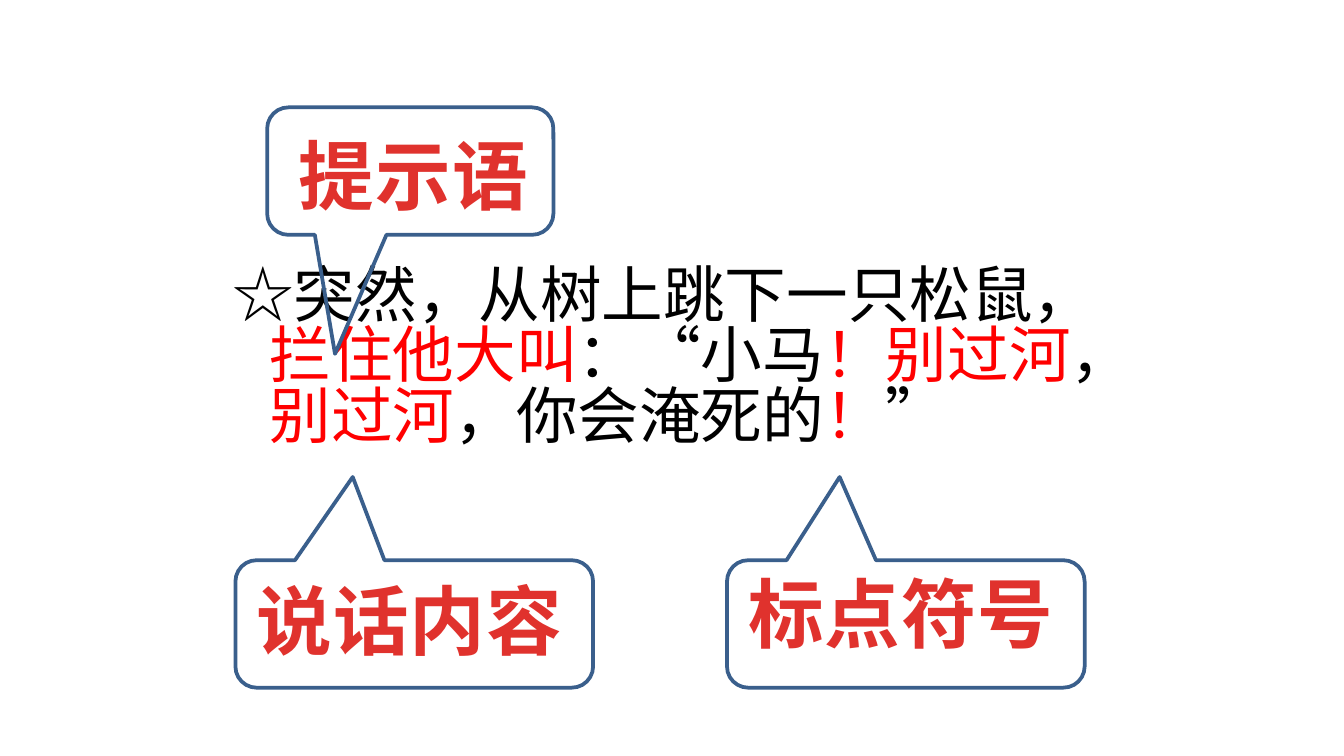
from lxml.etree import SubElement
from pptx import Presentation
from pptx.dml.color import RGBColor
from pptx.enum.lang import MSO_LANGUAGE_ID
from pptx.enum.shapes import MSO_SHAPE
from pptx.enum.text import PP_ALIGN
from pptx.oxml.ns import qn
from pptx.util import Cm, Pt

FACE = "Noto Sans CJK SC"
BLACK, RED = "000000", "FF0000"
LABEL, EDGE = "E0322D", "3A5F8C"

# Sentence pieces with their colours
SENTENCE = [
    ("☆突然，从树上跳下一只松鼠，", BLACK),
    ("拦住他大叫", RED),
    ("：“小马", BLACK),
    ("！别过河", RED),
    ("，", BLACK),
    ("别过河", RED),
    ("，你会淹死的", BLACK),
    ("！", RED),
    ("”", BLACK),
]

# Callouts: text, box, tail tip, label offset (cm)
CALLOUTS = [
    ("提示语", (5.05, 2.03, 5.41, 2.41), (-0.263, 1.434), (0.15, 0.3)),
    ("说话内容", (4.45, 10.59, 6.76, 2.41), (-0.172, -1.153), (0, 0.15)),
    ("标点符号", (13.74, 10.59, 6.76, 2.41), (-0.185, -1.153), (0, 0.03)),
]


def color(code):
    return RGBColor.from_string(code)


def set_font(font, size):
    """Set the face for Latin and Chinese text, and the size."""
    font.name = FACE
    font.size = Pt(size)
    font.language_id = MSO_LANGUAGE_ID.SIMPLIFIED_CHINESE
    SubElement(font._element, qn("a:ea"), typeface=FACE)


def add_text(slide, box, inset):
    """Add a wrapping text box; inset is (side, top)."""
    frame = slide.shapes.add_textbox(*map(Cm, box)).text_frame
    frame.word_wrap = True
    side, top = map(Cm, inset)
    frame.margin_left = frame.margin_right = side
    frame.margin_top = frame.margin_bottom = top
    return frame.paragraphs[0]


def add_sentence(slide, box):
    para = add_text(slide, box, (0.25, 0.25))
    para.line_spacing = 0.82
    # Hanging indent
    props = para._p.get_or_add_pPr()
    props.set("marL", str(Cm(0.71)))
    props.set("indent", str(Cm(-0.71)))
    set_font(para.font, 33)
    for text, code in SENTENCE:
        run = para.add_run()
        run.text = text
        run.font.color.rgb = color(code)


def add_callout(slide, text, box, tip, shift):
    left, top, width, height = box
    # Bubble
    bubble = slide.shapes.add_shape(
        MSO_SHAPE.ROUNDED_RECTANGULAR_CALLOUT, *map(Cm, box))
    bubble.shadow.inherit = False
    bubble.fill.background()
    bubble.line.color.rgb = color(EDGE)
    bubble.line.width = Pt(2)
    for index, value in enumerate((*tip, 0.167)):
        bubble.adjustments[index] = value
    # Label
    area = (left + shift[0], top + shift[1], width - 0.18, height - 0.48)
    para = add_text(slide, area, (0.2, 0.1))
    para.alignment = PP_ALIGN.CENTER
    para.add_run().text = text
    font = para.font
    font.bold = True
    font.color.rgb = color(LABEL)
    set_font(font, 40.5)
    font._element.set("spc", "50")


def main():
    deck = Presentation()
    deck.slide_width, deck.slide_height = Cm(25.4), Cm(14.29)
    slide = deck.slides.add_slide(deck.slide_layouts[6])
    add_sentence(slide, (4.14, 4.83, 17.12, 5.92))
    for callout in CALLOUTS:
        add_callout(slide, *callout)
    deck.save("out.pptx")


if __name__ == "__main__":
    main()
